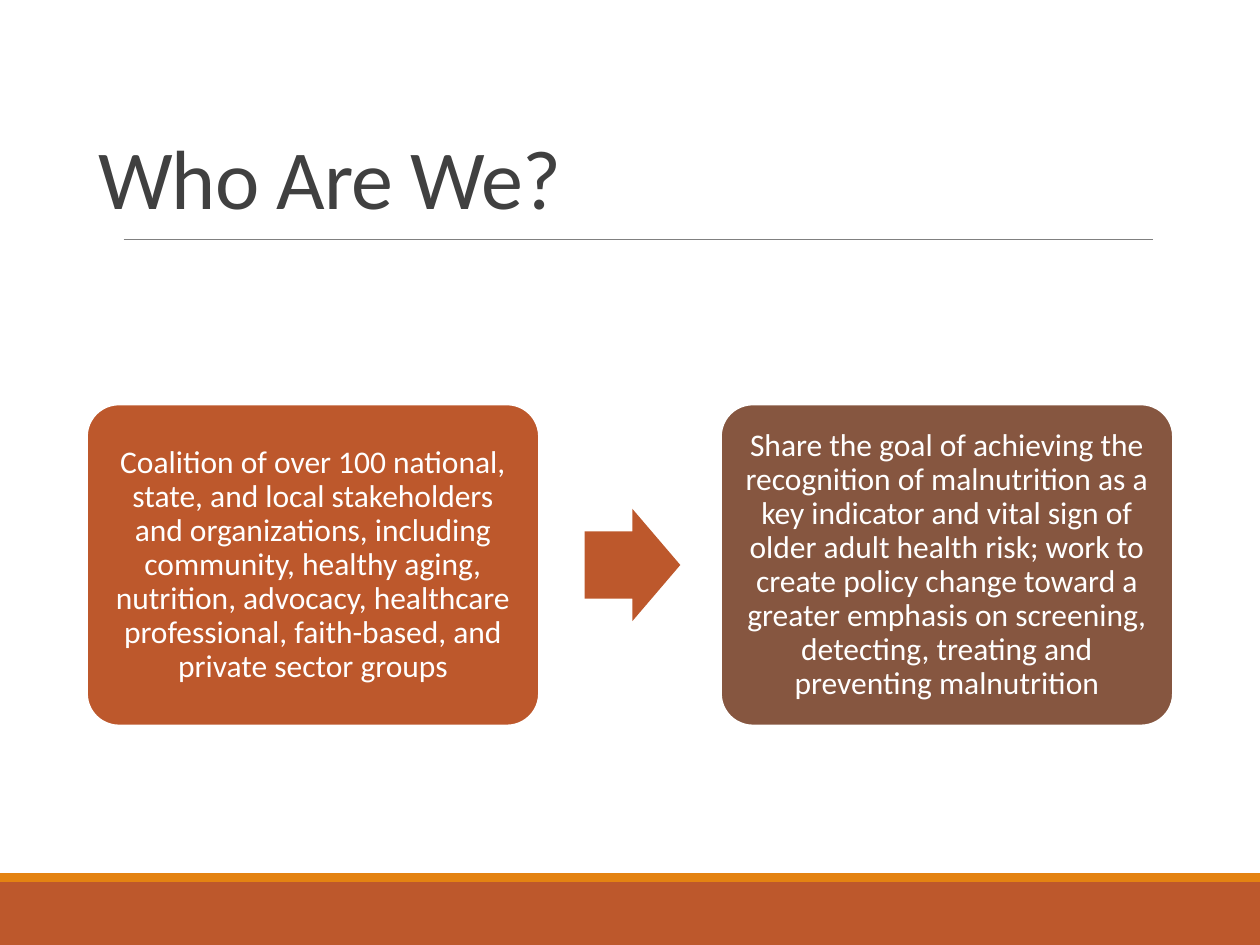
from dataclasses import dataclass

from lxml import etree
from pptx import Presentation
from pptx.dml.color import RGBColor
from pptx.enum.shapes import MSO_CONNECTOR, MSO_SHAPE
from pptx.enum.text import MSO_ANCHOR, PP_ALIGN
from pptx.oxml.ns import qn
from pptx.util import Cm, Pt

RECTANGLE, CARD, ARROW = MSO_SHAPE.RECTANGLE, MSO_SHAPE.ROUNDED_RECTANGLE, MSO_SHAPE.RIGHT_ARROW
STRAIGHT = MSO_CONNECTOR.STRAIGHT
BOTTOM, MIDDLE = MSO_ANCHOR.BOTTOM, MSO_ANCHOR.MIDDLE
LEFT, CENTER = PP_ALIGN.LEFT, PP_ALIGN.CENTER


@dataclass(frozen=True)
class Theme:
    font: str = "Calibri"
    rust: str = "BD582C"
    amber: str = "E48312"
    brown: str = "865640"
    white: str = "FFFFFF"
    ink: str = "404040"
    rule: str = "808080"
    title_size: int = 48
    body_size: int = 18


THEME = Theme()
TITLE = "Who Are We?"
STEPS = [
    ("Coalition of over 100 national, state, and local stakeholders and organizations, "
     "including community, healthy aging, nutrition, advocacy, healthcare professional, "
     "faith-based, and private sector groups", THEME.rust),
    ("Share the goal of achieving the recognition of malnutrition as a key indicator and "
     "vital sign of older adult health risk; work to create policy change toward a greater "
     "emphasis on screening, detecting, treating and preventing malnutrition", THEME.brown),
]
SLIDE_W, SLIDE_H = 25.4, 19.05
FOOTER_BANDS = [(17.78, 1.27, THEME.rust), (17.6, 0.18, THEME.amber)]
CARD_LEFT, CARD_TOP, CARD_W, CARD_H, CARD_GAP = 1.75, 8.15, 9.12, 6.48, 3.66
ARROW_W, ARROW_H = 1.93, 2.26


def add_block(slide, preset, left, top, width, height, fill, adjustments=()):
    block = slide.shapes.add_shape(preset, Cm(left), Cm(top), Cm(width), Cm(height))
    block.shadow.inherit = False
    block.fill.solid()
    block.fill.fore_color.rgb = RGBColor.from_string(fill)
    block.line.fill.background()
    for index, value in enumerate(adjustments):
        block.adjustments[index] = value
    return block


def write(shape, wording, size, color, anchor, align, spacing):
    frame = shape.text_frame
    frame.word_wrap = True
    frame.vertical_anchor = anchor
    paragraph = frame.paragraphs[0]
    paragraph.text = wording
    paragraph.alignment = align
    paragraph.line_spacing = spacing
    paragraph.font.name = THEME.font
    paragraph.font.size = Pt(size)
    paragraph.font.color.rgb = RGBColor.from_string(color)
    return paragraph


def add_title(slide):
    title = slide.shapes.add_textbox(Cm(1.73), Cm(1.02), Cm(21.92), Cm(3.68))
    paragraph = write(title, TITLE, THEME.title_size, THEME.ink, BOTTOM, LEFT, 0.85)
    paragraph.runs[0]._r.get_or_add_rPr().set("spc", "-50")


def add_rule(slide):
    rule = slide.shapes.add_connector(STRAIGHT, Cm(2.49), Cm(4.83), Cm(23.24), Cm(4.83))
    rule.line.color.rgb = RGBColor.from_string(THEME.rule)
    rule.line.width = Pt(0.5)
    etree.SubElement(rule._element.spPr, qn("a:effectLst"))


def add_step(slide, position, wording, fill):
    left = CARD_LEFT + position * (CARD_W + CARD_GAP)
    if position:
        add_block(slide, ARROW, left - CARD_GAP * 0.75, CARD_TOP + (CARD_H - ARROW_H) / 2,
                  ARROW_W, ARROW_H, THEME.rust, (0.6, 0.5))
    card = add_block(slide, CARD, left, CARD_TOP, CARD_W, CARD_H, fill, (0.1,))
    card.line.color.rgb = RGBColor.from_string(THEME.white)
    card.line.width = Pt(1.25)
    frame = card.text_frame
    frame.margin_left = frame.margin_right = frame.margin_top = frame.margin_bottom = Cm(0.18)
    write(card, wording, THEME.body_size, THEME.white, MIDDLE, CENTER, 0.9)


def main():
    """Build the slide that introduces the coalition and its goal."""
    deck = Presentation()
    deck.slide_width, deck.slide_height = Cm(SLIDE_W), Cm(SLIDE_H)
    slide = deck.slides.add_slide(deck.slide_layouts[6])
    for top, height, fill in FOOTER_BANDS:
        add_block(slide, RECTANGLE, 0, top, SLIDE_W, height, fill)
    add_rule(slide)
    add_title(slide)
    for position, (wording, fill) in enumerate(STEPS):
        add_step(slide, position, wording, fill)
    deck.save("out.pptx")


if __name__ == "__main__":
    main()
